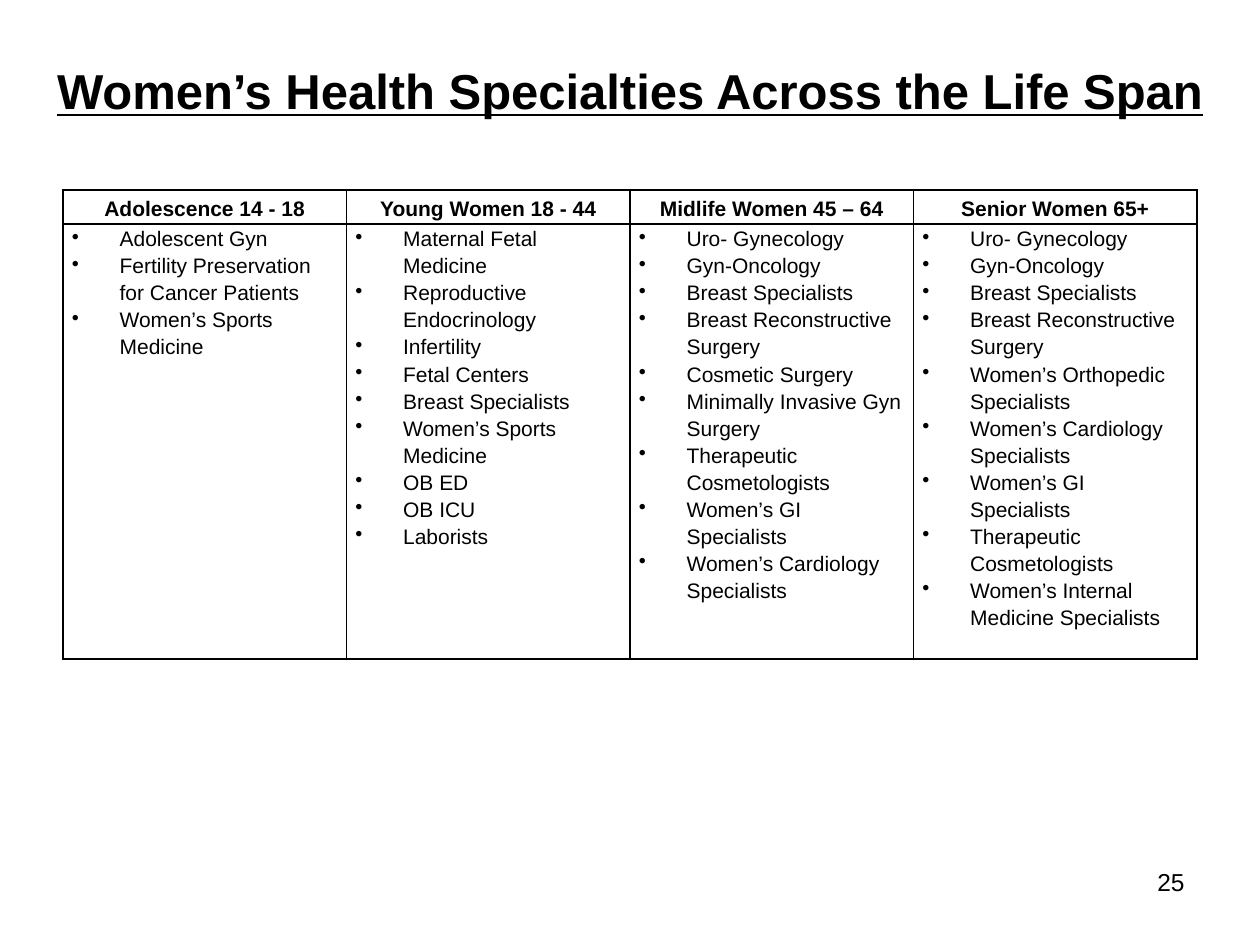
from dataclasses import dataclass

from lxml import etree
from pptx import Presentation
from pptx.dml.color import RGBColor
from pptx.enum.text import MSO_ANCHOR, MSO_AUTO_SIZE, PP_ALIGN
from pptx.oxml.ns import qn
from pptx.util import Inches, Pt

CENTER, LEFT, RIGHT = PP_ALIGN.CENTER, PP_ALIGN.LEFT, PP_ALIGN.RIGHT
TOP, MIDDLE = MSO_ANCHOR.TOP, MSO_ANCHOR.MIDDLE
NO_AUTOFIT = MSO_AUTO_SIZE.NONE

SPECIALTIES = {
    "Adolescence 14 - 18": [
        "Adolescent Gyn",
        "Fertility Preservation for Cancer Patients",
        "Women’s Sports Medicine",
    ],
    "Young Women 18 - 44": [
        "Maternal Fetal Medicine",
        "Reproductive Endocrinology",
        "Infertility",
        "Fetal Centers",
        "Breast Specialists",
        "Women’s Sports Medicine",
        "OB ED",
        "OB ICU",
        "Laborists",
    ],
    "Midlife Women 45 – 64": [
        "Uro- Gynecology",
        "Gyn-Oncology",
        "Breast Specialists",
        "Breast Reconstructive Surgery",
        "Cosmetic Surgery",
        "Minimally Invasive Gyn Surgery",
        "Therapeutic Cosmetologists",
        "Women’s GI Specialists",
        "Women’s Cardiology Specialists",
    ],
    "Senior Women 65+": [
        "Uro- Gynecology",
        "Gyn-Oncology",
        "Breast Specialists",
        "Breast Reconstructive Surgery",
        "Women’s Orthopedic Specialists",
        "Women’s Cardiology Specialists",
        "Women’s GI Specialists",
        "Therapeutic Cosmetologists",
        "Women’s Internal Medicine Specialists",
    ],
}


@dataclass(frozen=True)
class Theme:
    """Colours, font and type sizes of the slide."""
    font: str = "Arial"
    ink: str = "000000"
    title_size: int = 28
    number_size: int = 14
    table_size: int = 12
    line_spacing: float = 1.15
    border: float = 1
    indent: float = 0.38
    tab: float = 0.66
    cell_margin: float = 0.07


class SlideBuilder:
    """Holds the theme and the current slide and adds its elements."""

    def __init__(self, slide, theme):
        self.slide = slide
        self.theme = theme

    def add_text(self, paragraph, text, size, align=LEFT, bold=False, underline=False):
        paragraph.alignment = align
        run = paragraph.add_run()
        run.text = text
        font = run.font
        font.name, font.size = self.theme.font, Pt(size)
        font.bold, font.underline = bold, underline
        font.color.rgb = RGBColor.from_string(self.theme.ink)

    def title(self, text, left, top, width, height):
        heading = self.slide.shapes.title
        heading.left, heading.top = Inches(left), Inches(top)
        heading.width, heading.height = Inches(width), Inches(height)
        frame = heading.text_frame
        frame.auto_size, frame.vertical_anchor = NO_AUTOFIT, MIDDLE
        self.add_text(frame.paragraphs[0], text, self.theme.title_size, CENTER, True, True)

    def page_number(self, text, left, top, width, height):
        frame = self.slide.shapes.add_textbox(
            Inches(left), Inches(top), Inches(width), Inches(height)).text_frame
        frame.word_wrap = True
        self.add_text(frame.paragraphs[0], text, self.theme.number_size, RIGHT)

    def format_cell(self, cell, anchor):
        cell.vertical_anchor = anchor
        cell.margin_left = cell.margin_right = Inches(self.theme.cell_margin)
        cell.margin_top = cell.margin_bottom = 0
        cell.fill.background()
        properties = cell._tc.get_or_add_tcPr()
        for position, side in enumerate(("lnL", "lnR", "lnT", "lnB")):
            line = etree.Element(qn(f"a:{side}"), w=str(Pt(self.theme.border)))
            fill = etree.SubElement(line, qn("a:solidFill"))
            etree.SubElement(fill, qn("a:srgbClr"), val=self.theme.ink)
            properties.insert(position, line)

    def format_paragraph(self, paragraph, bullet=False):
        properties = paragraph._p.get_or_add_pPr()
        if bullet:
            indent = Inches(self.theme.indent)
            properties.set("marL", str(indent))
            properties.set("indent", str(-indent))
            etree.SubElement(properties, qn("a:buChar"), char="•")
        tabs = etree.SubElement(properties, qn("a:tabLst"))
        etree.SubElement(tabs, qn("a:tab"), pos=str(Inches(self.theme.tab)), algn="l")
        paragraph.line_spacing = self.theme.line_spacing

    def table(self, columns, left, top, width, row_heights):
        grid = self.slide.shapes.add_table(
            len(row_heights), len(columns), Inches(left), Inches(top),
            Inches(width), Inches(sum(row_heights))).table
        for row, height in zip(grid.rows, row_heights):
            row.height = Inches(height)
        for index, (life_stage, specialties) in enumerate(columns.items()):
            header, body = grid.cell(0, index), grid.cell(1, index)
            self.format_cell(header, MIDDLE)
            self.format_cell(body, TOP)
            heading = header.text_frame.paragraphs[0]
            self.format_paragraph(heading)
            self.add_text(heading, life_stage, self.theme.table_size, CENTER, True)
            frame = body.text_frame
            for order, specialty in enumerate(specialties):
                item = frame.add_paragraph() if order else frame.paragraphs[0]
                self.format_paragraph(item, bullet=True)
                self.add_text(item, specialty, self.theme.table_size)


def main():
    deck = Presentation()
    deck.slide_width, deck.slide_height = Inches(10), Inches(7.5)
    title_only = deck.slide_layouts[5]
    builder = SlideBuilder(deck.slides.add_slide(title_only), Theme())
    builder.title("Women’s Health Specialties Across the Life Span", 0.25, 0.09, 9.5, 1.25)
    builder.page_number("25", 7.17, 6.83, 2.33, 0.52)
    builder.table(SPECIALTIES, 0.5, 1.51, 9, (0.27, 3.22))
    deck.save("out.pptx")


if __name__ == "__main__":
    main()
